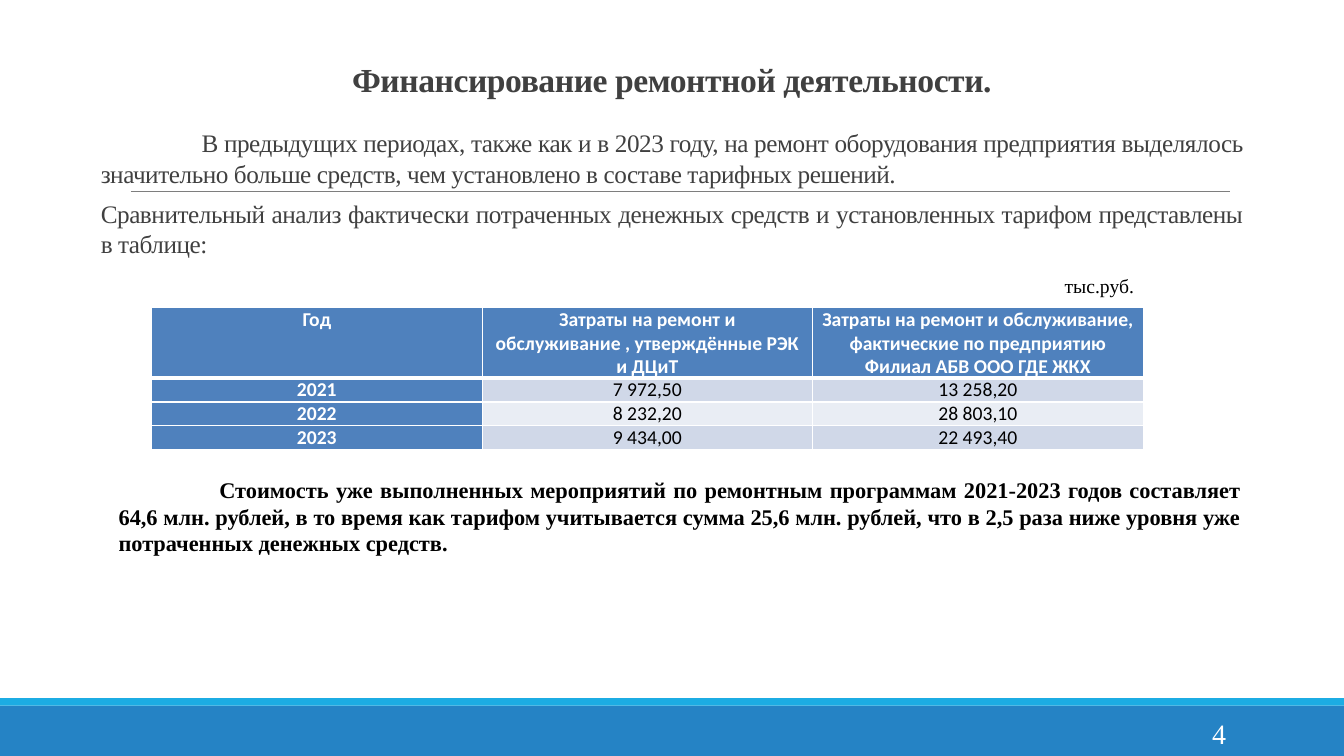
from lxml import etree
from pptx import Presentation
from pptx.dml.color import RGBColor
from pptx.enum.shapes import MSO_CONNECTOR, MSO_SHAPE
from pptx.enum.text import MSO_ANCHOR, PP_ALIGN
from pptx.oxml.ns import qn
from pptx.util import Cm, Pt

LEFT, CENTER, RIGHT, JUSTIFY = PP_ALIGN.LEFT, PP_ALIGN.CENTER, PP_ALIGN.RIGHT, PP_ALIGN.JUSTIFY
TOP, MIDDLE = MSO_ANCHOR.TOP, MSO_ANCHOR.MIDDLE

# Content
TITLE = "Финансирование ремонтной деятельности."
INTRO = [
    "В предыдущих периодах, также как и в 2023 году, на ремонт оборудования предприятия "
    "выделялось значительно больше средств, чем установлено в составе тарифных решений.",
    "Сравнительный анализ фактически потраченных денежных средств и установленных тарифом "
    "представлены в таблице:",
]
UNIT = "тыс.руб."
COSTS = [
    ("Год", "Затраты на ремонт и обслуживание , утверждённые РЭК и ДЦиТ",
     "Затраты на ремонт и обслуживание, фактические по предприятию Филиал АБВ ООО ГДЕ ЖКХ"),
    ("2021", "7 972,50", "13 258,20"),
    ("2022", "8 232,20", "28 803,10"),
    ("2023", "9 434,00", "22 493,40"),
]
CONCLUSION = [
    "Стоимость уже выполненных мероприятий по ремонтным программам 2021-2023 годов составляет "
    "64,6 млн. рублей, в то время как тарифом учитывается сумма 25,6 млн. рублей, что в 2,5 раза "
    "ниже уровня уже потраченных денежных средств.",
]
PAGE = "4"


class Theme:
    serif, sans = "Times New Roman", "Calibri"
    title, page, intro, conclusion, small = 24, 20, 18, 16, 14
    grey, black, white, rule = "404040", "000000", "FFFFFF", "7E7E7E"
    footer, stripe = "2583C5", "1CACE3"
    head, bands = "4F81BD", ("D0D8E8", "E9EDF4")


SLIDE_W, SLIDE_H = 33.87, 19.05
FOOTER_H, STRIPE_H = 1.27, 0.19
FIRST_LINE = 2.54
HEAD_H, ROW_H = 1.78, 0.6


def rgb(value):
    return RGBColor.from_string(value)


def style(p, size, color, font=Theme.serif, bold=False, align=LEFT, spacing=0):
    p.alignment = align
    for r in p.runs:
        r.font.size, r.font.name, r.font.bold = Pt(size), font, bold
        r.font.color.rgb = rgb(color)
        if spacing:
            r._r.get_or_add_rPr().set("spc", str(spacing))


def set_frame(tf, insets, anchor=TOP):
    tf.word_wrap, tf.vertical_anchor = True, anchor
    tf.margin_left, tf.margin_top, tf.margin_right, tf.margin_bottom = map(Cm, insets)


def add_text(s, box, lines, insets=(0.25, 0.13, 0.25, 0.13), anchor=TOP,
             before=0, first_line=0, **look):
    tf = s.shapes.add_textbox(*map(Cm, box)).text_frame
    set_frame(tf, insets, anchor)
    tf.text = "\n".join(lines)
    for p in tf.paragraphs:
        p.space_before = Pt(before)
        style(p, **look)
    if first_line:
        tf.paragraphs[0]._p.get_or_add_pPr().set("indent", str(Cm(first_line)))


def add_bar(s, top, height, color):
    sp = s.shapes.add_shape(MSO_SHAPE.RECTANGLE, 0, Cm(top), Cm(SLIDE_W), Cm(height))
    sp.shadow.inherit = False
    sp.fill.solid()
    sp.fill.fore_color.rgb = rgb(color)
    sp.line.fill.background()


def set_borders(cell, widths):
    tc_pr = cell._tc.get_or_add_tcPr()
    for i, (side, width) in enumerate(widths.items()):
        ln = etree.Element(qn("a:ln" + side), w=str(Pt(width)))
        fill = etree.SubElement(ln, qn("a:solidFill"))
        etree.SubElement(fill, qn("a:srgbClr"), val=Theme.white)
        tc_pr.insert(i, ln)


def add_costs(s, left, top, width):
    rows, cols = len(COSTS), len(COSTS[0])
    height = HEAD_H + ROW_H * (rows - 1)
    table = s.shapes.add_table(rows, cols, Cm(left), Cm(top), Cm(width), Cm(height)).table
    for column in table.columns:
        column.width = Cm(width / cols)
    for i, values in enumerate(COSTS):
        table.rows[i].height = Cm(ROW_H if i else HEAD_H)
        for j, value in enumerate(values):
            cell = table.cell(i, j)
            is_head = i == 0 or j == 0
            cell.text = value
            cell.margin_left = cell.margin_right = Cm(0.19)
            cell.margin_top = cell.margin_bottom = 0
            style(cell.text_frame.paragraphs[0], Theme.small,
                  Theme.white if is_head else Theme.black, Theme.sans, is_head, CENTER)
            cell.fill.solid()
            cell.fill.fore_color.rgb = rgb(Theme.head if is_head else Theme.bands[(i - 1) % 2])
            set_borders(cell, {"L": 1, "R": 1, "T": 3 if i == 1 else 1, "B": 3 if i == 0 else 1})


def main():
    prs = Presentation()
    prs.slide_width, prs.slide_height = Cm(SLIDE_W), Cm(SLIDE_H)
    s = prs.slides.add_slide(prs.slide_layouts[5])

    # Footer bars and rule
    footer_top = SLIDE_H - FOOTER_H
    add_bar(s, footer_top, FOOTER_H, Theme.footer)
    add_bar(s, footer_top - STRIPE_H, STRIPE_H, Theme.stripe)
    rule = s.shapes.add_connector(MSO_CONNECTOR.STRAIGHT, Cm(3.3), Cm(4.83), Cm(31), Cm(4.83))
    rule.line.color.rgb, rule.line.width = rgb(Theme.rule), Pt(0.48)
    etree.SubElement(rule._element.spPr, qn("a:effectLst"))

    # Title
    title = s.shapes.title
    title.left, title.top, title.width, title.height = map(Cm, (2.54, 1.09, 28.78, 1.32))
    tf = title.text_frame
    set_frame(tf, (0, 0.25, 0, 0))
    tf.text = TITLE
    p = tf.paragraphs[0]
    p.line_spacing, p.space_before = Pt(32.6), Pt(7)
    style(p, Theme.title, Theme.grey, bold=True, align=CENTER, spacing=-30)

    # Page number and introduction
    add_text(s, (30.55, 18.06, 1.27, 0.86), [PAGE], insets=(0, 0, 0, 0),
             size=Theme.page, color=Theme.white)
    add_text(s, (2.54, 2.97, 28.78, 3.58), INTRO, insets=(0, 0.25, 0, 0), before=7,
             first_line=FIRST_LINE, size=Theme.intro, color=Theme.grey,
             align=JUSTIFY, spacing=-30)

    # Cost table with its unit
    add_costs(s, 3.82, 7.75, 24.99)
    add_text(s, (26.2, 6.76, 2.63, 0.86), [UNIT], anchor=MIDDLE,
             size=Theme.small, color=Theme.black, align=RIGHT)

    # Conclusion
    add_text(s, (2.74, 11.86, 28.78, 2.39), CONCLUSION, first_line=FIRST_LINE,
             size=Theme.conclusion, color=Theme.black, bold=True, align=JUSTIFY)

    prs.save("out.pptx")


if __name__ == "__main__":
    main()
